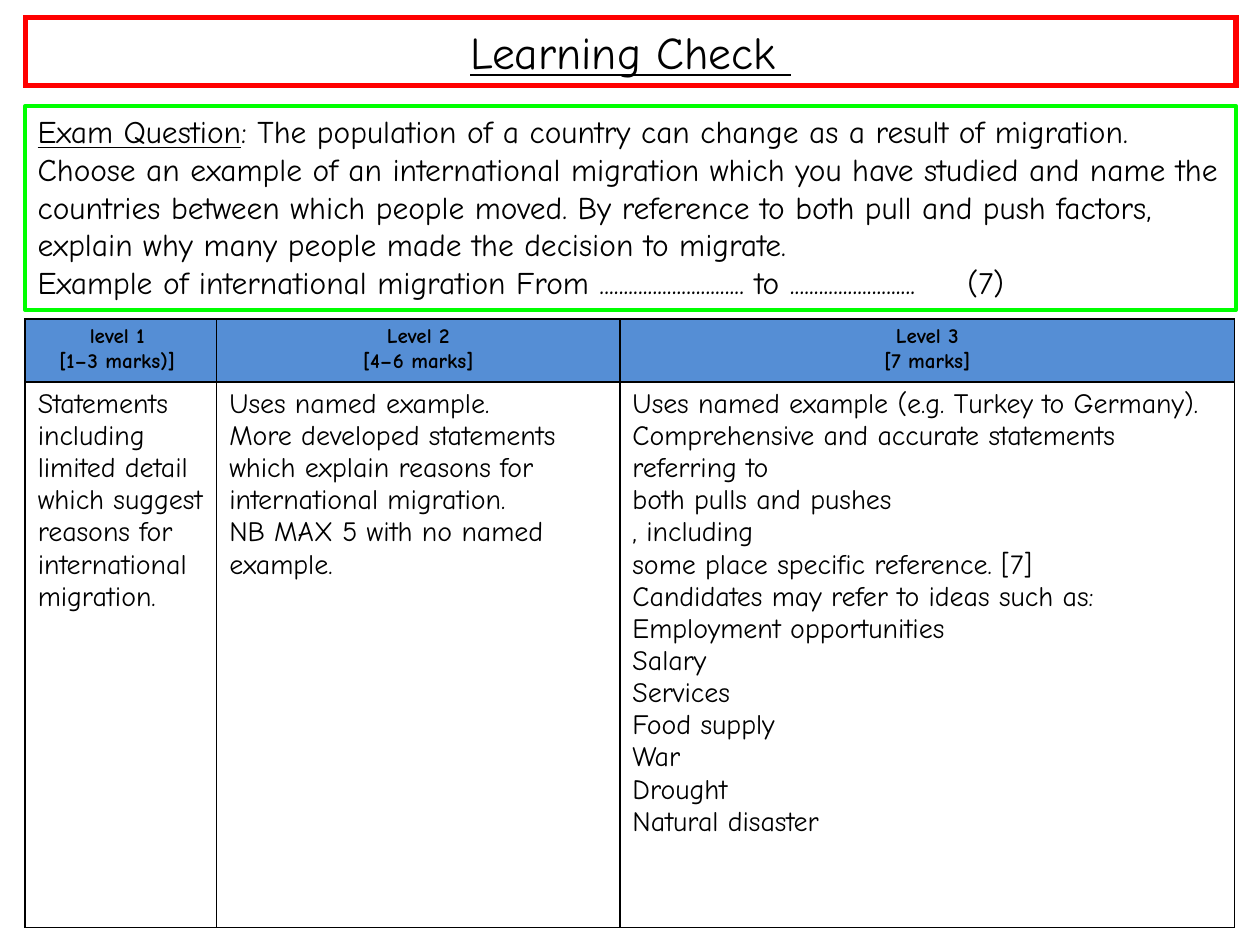
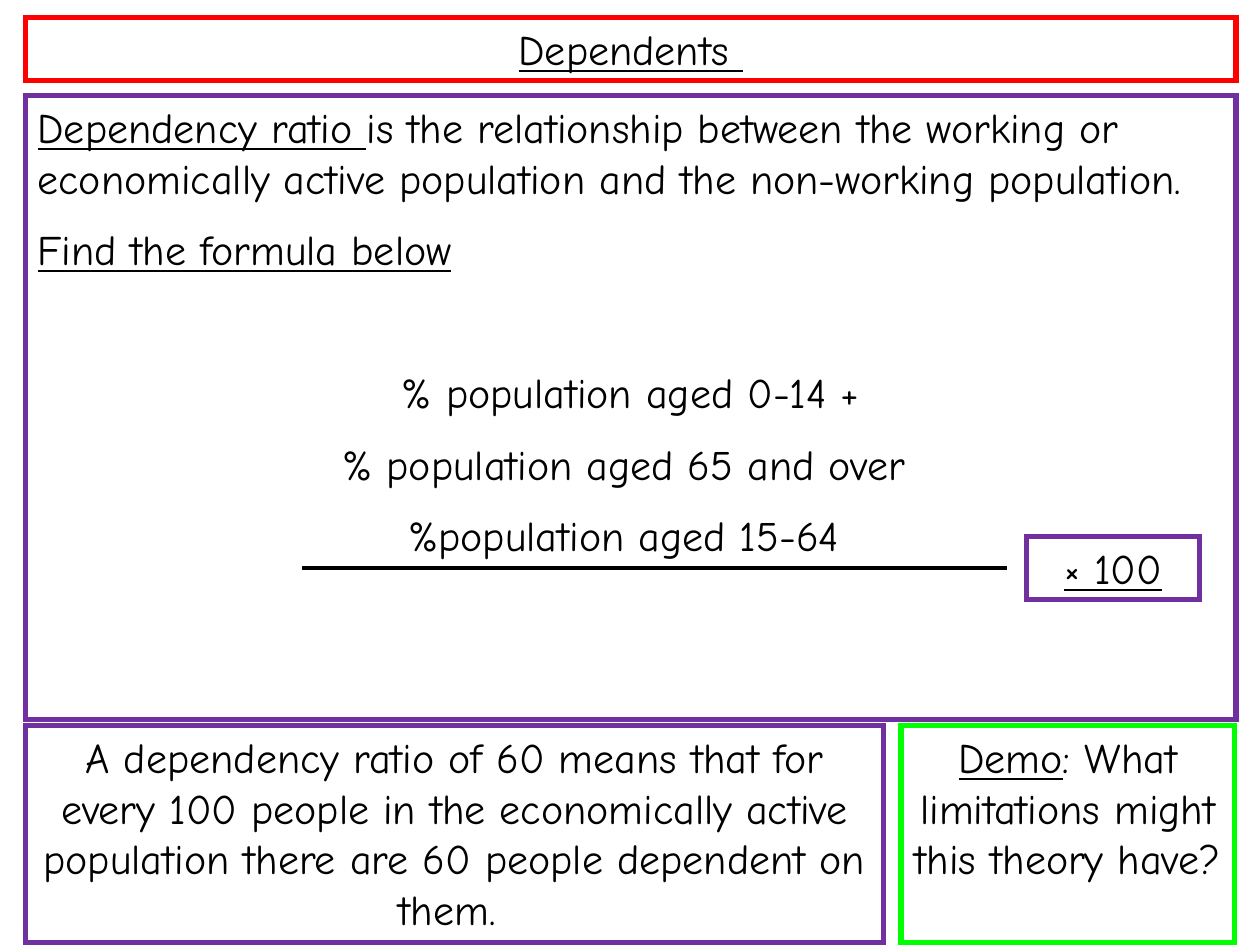
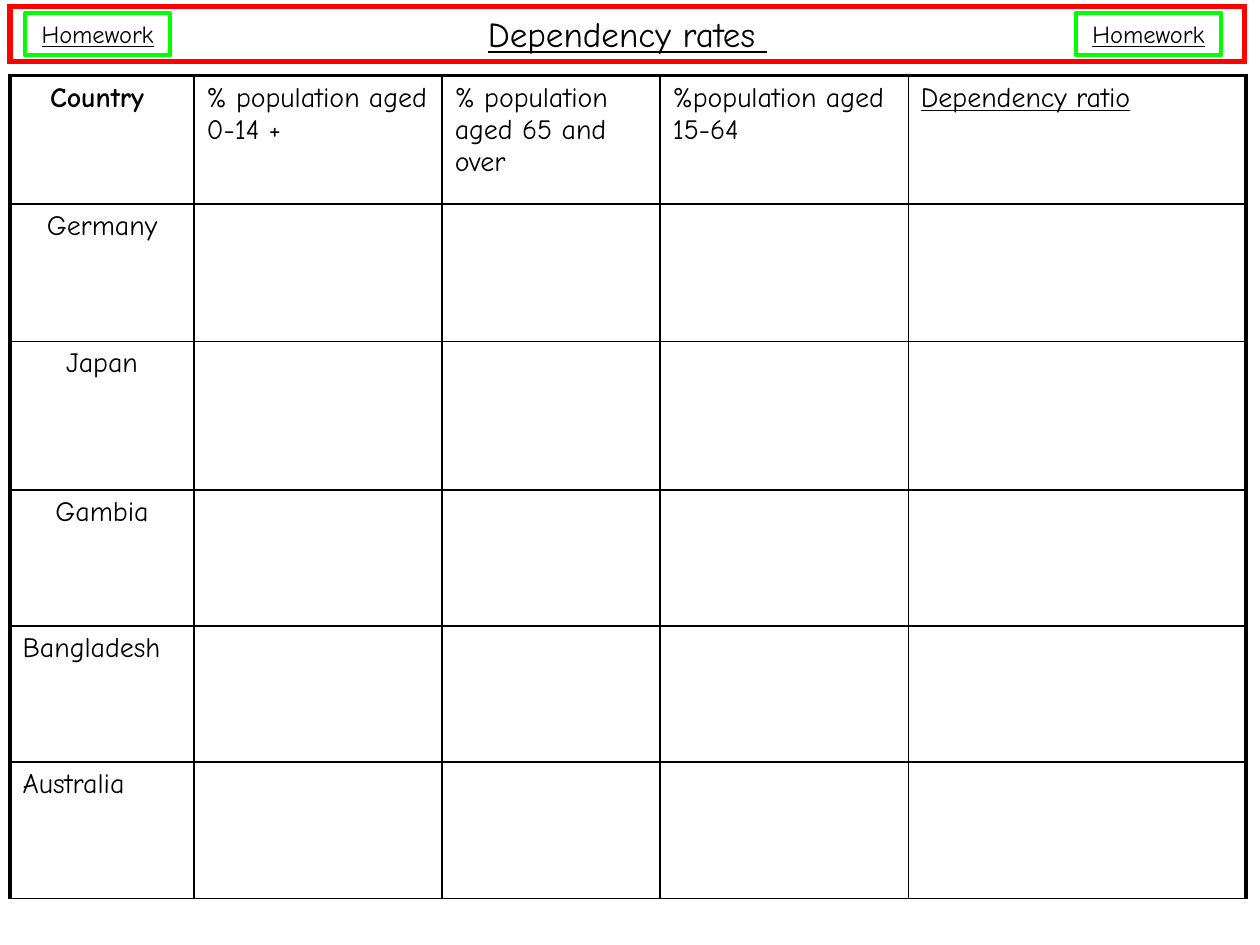
"""Build three geography lesson slides about migration and dependency ratios."""
from lxml.etree import SubElement
from pptx import Presentation
from pptx.dml.color import RGBColor
from pptx.enum.shapes import MSO_CONNECTOR as Link, MSO_SHAPE as Preset
from pptx.enum.text import MSO_ANCHOR as Anchor, MSO_AUTO_SIZE as Fit, PP_ALIGN as Align
from pptx.oxml.ns import qn
from pptx.util import Inches, Pt

BLACK = RGBColor(0x00, 0x00, 0x00)
WHITE = RGBColor(0xFF, 0xFF, 0xFF)
RED = RGBColor(0xFF, 0x00, 0x00)
GREEN = RGBColor(0x00, 0xFF, 0x00)
PURPLE = RGBColor(0x70, 0x30, 0xA0)
BLUE = RGBColor(0x55, 0x8E, 0xD5)

FONT = "Comic Neue"
COLUMNS, ROWS = 100, 75
LEFT, FULL = 2, 96.1
THICK, MEDIUM, THIN = 3, 2.25, 1


def write(frame, *lines, size=24, align=Align.LEFT, bold=False, before=0, tab=None):
    """Append lines to a text frame, underlining what stands between underscores."""
    for line in lines:
        first = frame.paragraphs[0]
        paragraph = frame.add_paragraph() if first.runs else first
        paragraph.alignment = align
        paragraph.space_before = Pt(before)
        if tab:
            stops = SubElement(paragraph._p.get_or_add_pPr(), qn("a:tabLst"))
            SubElement(stops, qn("a:tab"), pos=str(tab), algn="l")
        for index, part in enumerate(line.split("_")):
            if part:
                run = paragraph.add_run()
                run.text = part
                font = run.font
                font.name, font.size, font.bold = FONT, Pt(size), bold
                font.underline = index % 2 == 1
                font.color.rgb = BLACK


class Lesson:
    """Hold the lesson's style, its grid and the current slide."""

    def __init__(self):
        self.deck = Presentation()
        self.deck.slide_width, self.deck.slide_height = Inches(10), Inches(7.5)
        self.slide = None

    def x(self, columns):
        return round(self.deck.slide_width * columns / COLUMNS)

    def y(self, rows):
        return round(self.deck.slide_height * rows / ROWS)

    def place(self, left, top, width, height):
        return self.x(left), self.y(top), self.x(width), self.y(height)

    def new_slide(self):
        self.slide = self.deck.slides.add_slide(self.deck.slide_layouts[6])

    def box(self, place, border, *lines, weight=THICK, filled=True, wrap=True, **style):
        shape = self.slide.shapes.add_shape(Preset.RECTANGLE, *self.place(*place))
        shape.shadow.inherit = False
        if filled:
            shape.fill.solid()
            shape.fill.fore_color.rgb = WHITE
        else:
            shape.fill.background()
        shape.line.color.rgb, shape.line.width = border, Pt(weight)
        if weight == THICK:
            SubElement(shape.line._get_or_add_ln(), qn("a:miter"), lim="800000")
        frame = shape.text_frame
        frame.word_wrap, frame.vertical_anchor = wrap, Anchor.TOP
        frame.auto_size = Fit.SHAPE_TO_FIT_TEXT
        write(frame, *lines, **style)
        return frame

    def title(self, place, text, size):
        self.box(place, RED, f"_{text} _", size=size, align=Align.CENTER)

    def rule(self, start, end, row):
        line = self.slide.shapes.add_connector(
            Link.STRAIGHT, self.x(start), self.y(row), self.x(end), self.y(row))
        line.line.color.rgb, line.line.width = BLACK, Pt(MEDIUM)
        SubElement(line._element.spPr, qn("a:effectLst"))

    def table(self, left, top, widths, heights):
        place = self.place(left, top, sum(widths), sum(heights))
        grid = self.slide.shapes.add_table(len(heights), len(widths), *place).table
        grid.first_row = grid.horz_banding = False
        for column, width in zip(grid.columns, widths):
            column.width = self.x(width)
        for row, height in zip(grid.rows, heights):
            row.height = self.y(height)
        return grid

    def cell(self, cell, *lines, fill=None, heavy="", **style):
        properties = cell._tc.get_or_add_tcPr()
        for side in "LRTB":
            width = Pt(MEDIUM if side in heavy else THIN)
            edge = SubElement(properties, qn(f"a:ln{side}"), w=str(width))
            SubElement(SubElement(edge, qn("a:solidFill")), qn("a:srgbClr"), val=str(BLACK))
        if fill:
            cell.fill.solid()
            cell.fill.fore_color.rgb = fill
        else:
            cell.fill.background()
        write(cell.text_frame, *lines, **style)


def learning_check(lesson):
    """Show the exam question and its mark scheme."""
    lesson.new_slide()
    lesson.title((LEFT, 1.4, FULL, 5.4), "Learning Check", 26)
    question = lesson.box(
        (LEFT, 8.4, FULL, 16.2), GREEN,
        "_Exam Question_: The population of a country can change as a result of migration.",
        "Choose an example of an international migration which you have studied and name "
        "the countries between which people moved. By reference to both pull and push "
        "factors, explain why many people made the decision to migrate.",
        weight=MEDIUM, filled=False, size=18)
    write(question, "Example of international migration From .............................. "
          "to ..........................\t(7)", size=18, tab=lesson.x(73.8))

    levels = [
        (("level 1 ", "[1–3 marks)] "),
         ("Statements including limited detail which suggest reasons for "
          "international migration.",)),
        (("Level 2", "[4–6 marks]"),
         ("Uses named example.",
          "More developed statements which explain reasons for international migration.",
          "NB MAX 5 with no named example.")),
        (("Level 3", "[7 marks]"),
         ("Uses named example (e.g. Turkey to Germany).",
          "Comprehensive and accurate statements referring to",
          "both pulls and pushes", ", including",
          "some place specific reference. [7]",
          "Candidates may refer to ideas such as:",
          "Employment opportunities", "Salary", "Services", "Food supply",
          "War", "Drought", "Natural disaster")),
    ]
    scheme = lesson.table(LEFT, 25.3, (15.2, 32, 48.8), (5, 43.3))
    for column, (heading, criteria) in enumerate(levels):
        lesson.cell(scheme.cell(0, column), *heading, fill=BLUE,
                    size=12, bold=True, align=Align.CENTER)
        lesson.cell(scheme.cell(1, column), *criteria, size=16)


def dependents(lesson):
    """Explain the dependency ratio and its formula."""
    lesson.new_slide()
    lesson.title((LEFT, 1.4, FULL, 5), "Dependents", 24)
    formula = lesson.box(
        (LEFT, 7.6, FULL, 49.5), PURPLE,
        "_Dependency ratio _is the relationship between the working or economically "
        "active population and the non-working population.",
        "_Find the formula below_", before=12)
    write(formula, "% population aged 0-14 +", align=Align.CENTER, before=53)
    write(formula, "% population aged 65 and over ", "%population aged 15-64 ",
          align=Align.CENTER, before=12)
    lesson.rule(24, 79.9, 45.1)
    lesson.box((81.5, 42.6, 13.7, 5), PURPLE, "_× 100_", align=Align.CENTER)
    lesson.box((LEFT, 57.6, 68.1, 17.2), PURPLE,
               "A dependency ratio of 60 means that for every 100 people in the economically "
               "active population there are 60 people dependent on them. ",
               align=Align.CENTER)
    lesson.box((71.5, 57.6, 26.5, 17.2), GREEN,
               "_Demo_: What limitations might this theory have?", align=Align.CENTER)


def dependency_rates(lesson):
    """Lay out the homework table of dependency rates by country."""
    lesson.new_slide()
    headings = ("Country ", "% population aged 0-14 +", "% population aged 65 and over",
                "%population aged 15-64", "_Dependency ratio_")
    countries = {"Germany": Align.CENTER, "Japan": Align.CENTER, "Gambia": Align.CENTER,
                 "Bangladesh": Align.LEFT, "Australia": Align.LEFT}
    rates = lesson.table(0.8, 6, (14.6, 19.7, 17.3, 19.7, 26.8),
                         (10.2, 10.9, 11.8, 10.8, 10.8, 10.8))
    sides = ["L", "", "", "", "R"]
    for column, (heading, side) in enumerate(zip(headings, sides)):
        is_country = column == 0
        lesson.cell(rates.cell(0, column), heading, heavy="T" + side, size=16,
                    bold=is_country, align=Align.CENTER if is_country else Align.LEFT)
        for row, (country, align) in enumerate(countries.items(), 1):
            lesson.cell(rates.cell(row, column), country if is_country else "",
                        heavy=side, size=16, align=align)

    lesson.title((0.8, 0.5, 98, 4.4), "Dependency rates", 20)
    for left in (LEFT, 85.4):
        lesson.box((left, 1, 11.5, 3.4), GREEN, "_Homework_", weight=MEDIUM,
                   filled=False, wrap=False, size=14, align=Align.CENTER)


def main():
    """Build the slides in order and save them."""
    lesson = Lesson()
    for build in (learning_check, dependents, dependency_rates):
        build(lesson)
    lesson.deck.save("out.pptx")


if __name__ == "__main__":
    main()
